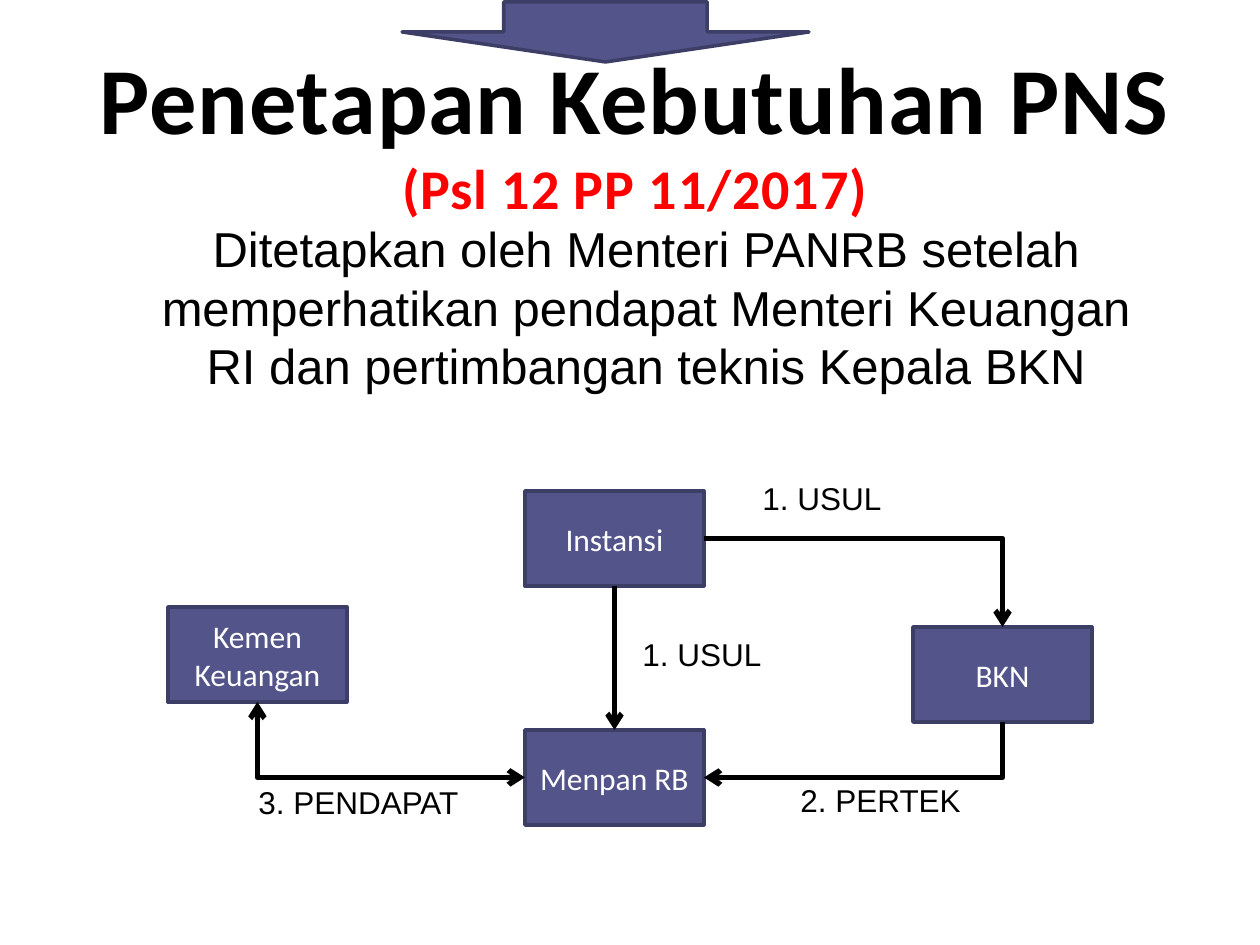
"""Build the slide on how civil-servant needs are determined."""
import pptx
import pptx.dml.color
import pptx.enum.shapes
import pptx.enum.text
import pptx.oxml.ns
import pptx.util
from lxml import etree

COLORS = {"box": "53548A", "edge": "3D3E66", "ink": "000000", "paper": "FFFFFF", "accent": "FF0000"}
PX = pptx.util.Inches(1) / 126
SHAPES = pptx.enum.shapes.MSO_SHAPE
CONNECTORS = pptx.enum.shapes.MSO_CONNECTOR
ALIGN = pptx.enum.text.PP_ALIGN
ANCHOR = pptx.enum.text.MSO_ANCHOR
TOP, LEFT, BOTTOM, RIGHT = range(4)


def px(*lengths):
    return [pptx.util.Emu(round(length * PX)) for length in lengths]


def color(name):
    return pptx.dml.color.RGBColor.from_string(COLORS[name])


class Canvas:
    def __init__(self, slide):
        self.slide = slide

    def run(self, paragraph, text, size, font, ink, bold=False, spacing=0):
        run = paragraph.add_run()
        run.text = text
        run.font.size = pptx.util.Pt(size)
        run.font.name = font
        run.font.bold = bold
        run.font.color.rgb = color(ink)
        if spacing:
            run._r.get_or_add_rPr().set("spc", str(spacing))

    def title(self, lines, left, top, width, height):
        title = self.slide.shapes.title
        title.left, title.top, title.width, title.height = px(left, top, width, height)
        frame = title.text_frame
        frame.auto_size = pptx.enum.text.MSO_AUTO_SIZE.NONE
        frame.vertical_anchor = ANCHOR.TOP
        frame.margin_top = frame.margin_bottom = 0
        for index, (text, size, ink) in enumerate(lines):
            paragraph = frame.add_paragraph() if index else frame.paragraphs[0]
            paragraph.alignment = ALIGN.CENTER
            self.run(paragraph, text, size, "Calibri", ink, bold=True, spacing=50)

    def text(self, text, left, top, width, height, size=18, align=ALIGN.LEFT):
        frame = self.slide.shapes.add_textbox(*px(left, top, width, height)).text_frame
        frame.word_wrap = True
        frame.paragraphs[0].alignment = align
        self.run(frame.paragraphs[0], text, size, "Arial", "ink")

    def shape(self, kind, left, top, width, height):
        shape = self.slide.shapes.add_shape(kind, *px(left, top, width, height))
        shape.shadow.inherit = False
        shape.fill.solid()
        shape.fill.fore_color.rgb = color("box")
        shape.line.color.rgb = color("edge")
        shape.line.width = pptx.util.Pt(2)
        return shape

    def box(self, text, left, top):
        shape = self.shape(SHAPES.RECTANGLE, left, top, 179, 95)
        frame = shape.text_frame
        frame.word_wrap = True
        frame.vertical_anchor = ANCHOR.MIDDLE
        frame.paragraphs[0].alignment = ALIGN.CENTER
        self.run(frame.paragraphs[0], text, 18, "Calibri", "paper")
        return shape

    def arrow(self, start, start_site, end, end_site, heads, bent=True):
        kind = CONNECTORS.ELBOW if bent else CONNECTORS.STRAIGHT
        connector = self.slide.shapes.add_connector(kind, 0, 0, 0, 0)
        connector.begin_connect(start, start_site)
        connector.end_connect(end, end_site)
        connector.line.color.rgb = color("ink")
        connector.line.width = pptx.util.Pt(3)
        properties = connector._element.spPr
        if bent:
            properties.find(pptx.oxml.ns.qn("a:prstGeom")).set("prst", "bentConnector2")
        line = connector.line._get_or_add_ln()
        for head in heads:
            etree.SubElement(line, pptx.oxml.ns.qn(f"a:{head}"), type="arrow")
        etree.SubElement(properties, pptx.oxml.ns.qn("a:effectLst"))


def main():
    presentation = pptx.Presentation()
    presentation.slide_width, presentation.slide_height = px(1260, 945)
    canvas = Canvas(presentation.slides.add_slide(presentation.slide_layouts[5]))

    canvas.title([("Penetapan Kebutuhan PNS", 54, "ink"), ("(Psl 12 PP 11/2017)", 32, "accent")],
                 5, 40, 1260, 184)
    canvas.text("Ditetapkan oleh Menteri PANRB setelah memperhatikan pendapat Menteri Keuangan RI "
                "dan pertimbangan teknis Kepala BKN", 135, 212, 1022, 190, 28, ALIGN.CENTER)
    canvas.shape(SHAPES.DOWN_ARROW, 402, 2, 407, 60)

    agency = canvas.box("Instansi", 525, 491)
    finance = canvas.box("Kemen Keuangan", 168, 607)
    ministry = canvas.box("Menpan RB", 525, 730)
    civil_service = canvas.box("BKN", 913, 627)

    canvas.arrow(agency, BOTTOM, ministry, TOP, ["tailEnd"], bent=False)
    canvas.arrow(agency, RIGHT, civil_service, TOP, ["tailEnd"])
    canvas.arrow(ministry, RIGHT, civil_service, BOTTOM, ["headEnd"])
    canvas.arrow(ministry, LEFT, finance, BOTTOM, ["headEnd", "tailEnd"])

    for text, left, top, width in [("1. USUL", 750, 473, 179), ("1. USUL", 630, 629, 179),
                                   ("2. PERTEK", 788, 775, 227), ("3. PENDAPAT", 246, 777, 277)]:
        canvas.text(text, left, top, width, 50)

    presentation.save("out.pptx")


if __name__ == "__main__":
    main()
